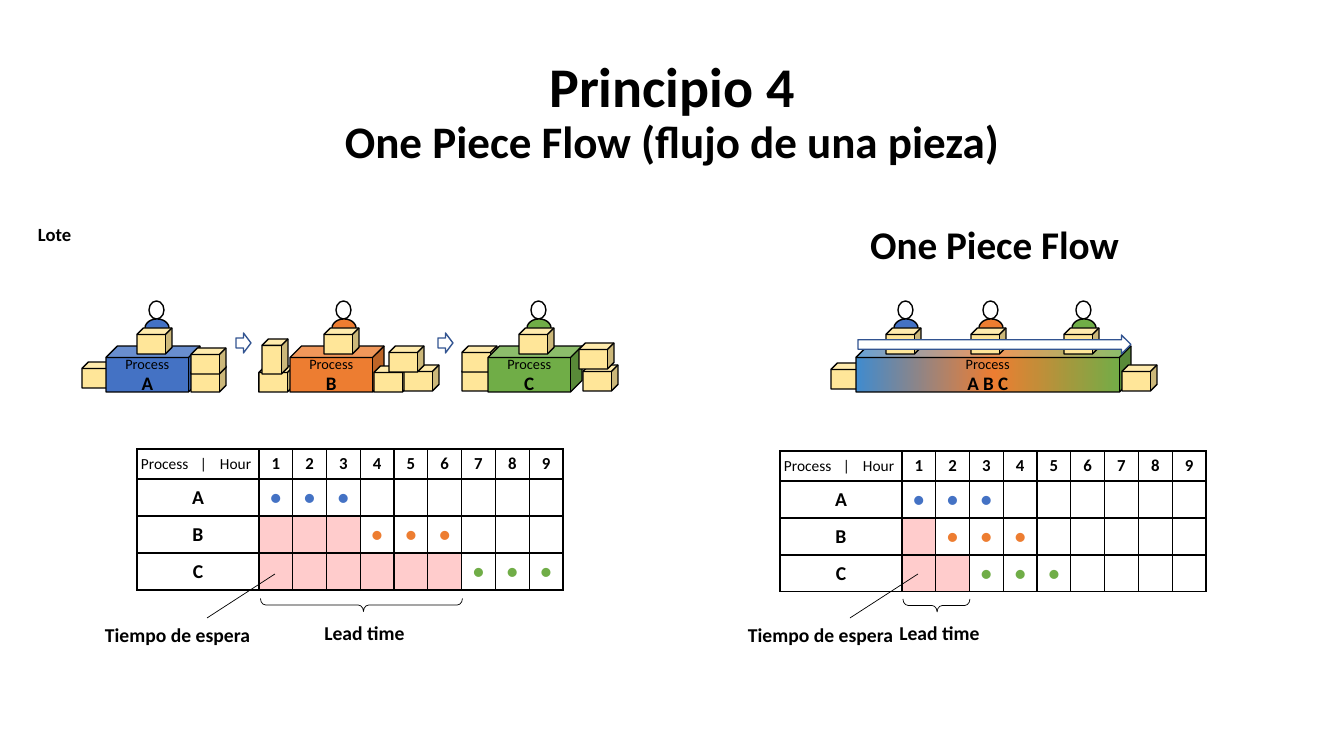
from copy import deepcopy

from lxml.etree import SubElement
from pptx import Presentation
from pptx.dml.color import RGBColor
from pptx.enum.shapes import MSO_CONNECTOR, MSO_SHAPE
from pptx.enum.text import MSO_ANCHOR, MSO_AUTO_SIZE, PP_ALIGN
from pptx.oxml import parse_xml
from pptx.oxml.ns import nsdecls, qn
from pptx.util import Pt

SCALE = 914400 / 100.8
BLACK = RGBColor(0x00, 0x00, 0x00)
WHITE = RGBColor(0xFF, 0xFF, 0xFF)
BLUE = RGBColor(0x44, 0x72, 0xC4)
ORANGE = RGBColor(0xED, 0x7D, 0x31)
GREEN = RGBColor(0x70, 0xAD, 0x47)
SKY = RGBColor(0x40, 0x8B, 0xCE)
CRATE = RGBColor(0xFF, 0xE6, 0x99)
WAITING = RGBColor(0xFF, 0xCC, 0xCC)
ARROW_EDGE = RGBColor(0x32, 0x54, 0x91)
PROCESSES = (("A", BLUE), ("B", ORANGE), ("C", GREEN))
HOURS = 9
PIECES = 3
LABEL_WIDTH = 122
HOURS_WIDTH = 304
HEADER_HEIGHT = 30
ROW_HEIGHT = 37
NOTE_TOP = 618
BRACE_MIDDLE = 605


def px(length):
    return round(length * SCALE)


def box_of(*lengths):
    return [px(length) for length in lengths]


def apply(target, values):
    for key, value in values.items():
        setattr(target, key, value)


def write(paragraph, text, size, bold=False, color=BLACK, **layout):
    apply(paragraph, layout)
    run = paragraph.add_run()
    run.text = text
    apply(run.font, {"name": "Calibri", "size": Pt(size), "bold": bold})
    run.font.color.rgb = color


def add_label(slide, box, text, size, **layout):
    frame = slide.shapes.add_textbox(*box_of(*box)).text_frame
    frame.word_wrap = True
    write(frame.paragraphs[0], text, size, True, **layout)


def add_part(shapes, preset, box, fill=None, edge=BLACK, width=1):
    part = shapes.add_shape(preset, *box_of(*box))
    part.shadow.inherit = False
    if fill is None:
        part.fill.background()
    else:
        part.fill.solid()
        part.fill.fore_color.rgb = fill
    part.line.color.rgb = edge
    part.line.width = Pt(width)
    return part


def blend(fill, stops):
    fill.gradient()
    fill.gradient_angle = 0
    stop_list = fill.gradient_stops[0]._gs.getparent()
    stop_list.append(deepcopy(stop_list[-1]))
    for stop, (position, color) in zip(fill.gradient_stops, stops):
        stop.position = position
        stop.color.rgb = color


def draw_title(slide, box):
    title = slide.shapes.title
    apply(title, dict(zip(("left", "top", "width", "height"), box_of(*box))))
    frame = title.text_frame
    apply(frame, {"auto_size": MSO_AUTO_SIZE.NONE, "word_wrap": True,
                  "vertical_anchor": MSO_ANCHOR.MIDDLE})
    layout = {"alignment": PP_ALIGN.CENTER, "line_spacing": 0.9}
    write(frame.paragraphs[0], "Principio 4", 40, True, **layout)
    write(frame.add_paragraph(), "One Piece Flow (flujo de una pieza)", 32.2, True, **layout)


def draw_station(shapes, origin, name, bench_color, bench, operators, behind, ahead):
    left, top = origin

    def crate(x, y, width=35, height=26):
        add_part(shapes, MSO_SHAPE.CUBE, (left + x, top + y, width, height), CRATE)

    for x, color in operators:
        add_part(shapes, MSO_SHAPE.OVAL, (left + x, top, 15, 18))
        add_part(shapes, MSO_SHAPE.OVAL, (left + x - 4, top + 18, 24, 18), color)
    for place in behind:
        crate(*place)
    bench_x, bench_width = bench
    table = add_part(shapes, MSO_SHAPE.CUBE, (left + bench_x, top + 45, bench_width, 46), bench_color)
    frame = table.text_frame
    apply(frame, {"word_wrap": True, "vertical_anchor": MSO_ANCHOR.MIDDLE, "margin_left": 0,
                  "margin_right": 0, "margin_top": 0, "margin_bottom": 0})
    write(frame.paragraphs[0], "Process", 10.2, alignment=PP_ALIGN.CENTER)
    write(frame.add_paragraph(), name, 13.6, True, alignment=PP_ALIGN.CENTER)
    for x, _ in operators:
        crate(x - 12, 27)
    for place in ahead:
        crate(*place)
    return table


def draw_batch_line(slide, origin):
    left, top = origin
    shapes = slide.shapes.add_group_shape().shapes
    stations = (
        (24, 67, [(0, 61)], [(109, 65), (109, 47)]),
        (208, 254, [(177, 65), (180, 38, 26, 35)], [(292, 65), (322, 64), (307, 45)]),
        (406, 449, [(380, 64), (380, 45)], [(501, 64), (497, 42)]),
    )
    for (name, color), (bench, operator, behind, ahead) in zip(PROCESSES, stations):
        draw_station(shapes, origin, name, color, (bench, 94), [(operator, color)], behind, ahead)
    for x in (154, 356):
        add_part(shapes, MSO_SHAPE.RIGHT_ARROW, (left + x, top + 32, 15, 20), WHITE, ARROW_EDGE)


def draw_flow_line(slide, origin):
    left, top = origin
    shapes = slide.shapes.add_group_shape().shapes
    operators = [(67, BLUE), (152, ORANGE), (245, GREEN)]
    bench = draw_station(shapes, origin, "A B C", BLUE, (25, 275), operators, [(0, 62)], [(291, 64)])
    blend(bench.fill, ((0, SKY), (0.5, ORANGE), (0.97, GREEN)))
    add_part(shapes, MSO_SHAPE.RIGHT_ARROW, (left + 27, top + 34, 273, 19), WHITE, ARROW_EDGE)


def format_cell(cell, fill=None):
    margin = px(4)
    apply(cell, {"margin_left": margin, "margin_right": margin, "margin_top": margin,
                 "margin_bottom": margin, "vertical_anchor": MSO_ANCHOR.MIDDLE})
    if fill is None:
        cell.fill.background()
    else:
        cell.fill.solid()
        cell.fill.fore_color.rgb = fill
    for index, side in enumerate(("lnL", "lnR", "lnT", "lnB")):
        cell._tc.tcPr.insert(index, parse_xml(
            f'<a:{side} {nsdecls("a")} w="12700"><a:solidFill><a:srgbClr val="{BLACK}"/>'
            f'</a:solidFill></a:{side}>'))


def draw_schedule(slide, origin, starts):
    size = (LABEL_WIDTH + HOURS_WIDTH, HEADER_HEIGHT + ROW_HEIGHT * len(PROCESSES))
    table = slide.shapes.add_table(len(PROCESSES) + 1, HOURS + 1, *box_of(*origin, *size)).table
    apply(table, {"first_row": False, "horz_banding": False})
    for index, column in enumerate(table.columns):
        column.width = px(HOURS_WIDTH) // HOURS if index else px(LABEL_WIDTH)
    for index, row in enumerate(table.rows):
        row.height = px(ROW_HEIGHT if index else HEADER_HEIGHT)
    centre = {"alignment": PP_ALIGN.CENTER}
    heading = table.cell(0, 0)
    format_cell(heading)
    paragraph = heading.text_frame.paragraphs[0]
    tabs = SubElement(paragraph._p.get_or_add_pPr(), qn("a:tabLst"))
    for position in (59, 79):
        SubElement(tabs, qn("a:tab"), pos=str(px(position)), algn="l")
    write(paragraph, "Process\t|\tHour", 11)
    for hour in range(1, HOURS + 1):
        cell = table.cell(0, hour)
        format_cell(cell)
        write(cell.text_frame.paragraphs[0], str(hour), 12, True, **centre)
    for row, ((name, color), start) in enumerate(zip(PROCESSES, starts), 1):
        label = table.cell(row, 0)
        format_cell(label)
        write(label.text_frame.paragraphs[0], name, 14, True, **centre)
        for hour in range(1, HOURS + 1):
            cell = table.cell(row, hour)
            format_cell(cell, WAITING if hour < start else None)
            paragraph = cell.text_frame.paragraphs[0]
            if start <= hour < start + PIECES:
                write(paragraph, "●", 14, color=color, **centre)
            else:
                paragraph._p.get_or_add_endParaRPr().set("sz", "1400")


def draw_notes(slide, left, waiting_hours):
    add_label(slide, (left - 42, NOTE_TOP, 223, 34), "Tiempo de espera", 14)
    pointer = slide.shapes.add_connector(
        MSO_CONNECTOR.STRAIGHT, *box_of(left + 70, NOTE_TOP, left + 138, NOTE_TOP - 44))
    pointer.line.color.rgb = BLACK
    pointer.line.width = Pt(0.5)
    SubElement(pointer._element.spPr, qn("a:effectLst"))
    span = HOURS_WIDTH * waiting_hours // HOURS
    middle = left + LABEL_WIDTH + 1 + span // 2
    brace = add_part(slide.shapes, MSO_SHAPE.LEFT_BRACE,
                     (middle - 6, BRACE_MIDDLE - span // 2, 13, span), width=0.5)
    brace.rotation = 270
    for index, ratio in enumerate((0.4, 0.51)):
        brace.adjustments[index] = ratio
    add_label(slide, (middle - 108, NOTE_TOP - 2, 223, 34), "Lead time", 14, alignment=PP_ALIGN.CENTER)


def main():
    deck = Presentation()
    apply(deck, {"slide_width": px(1344), "slide_height": px(756)})
    slide = deck.slides.add_slide(deck.slide_layouts[5])
    draw_title(slide, (0, 48, 1344, 132))
    add_label(slide, (28, 221, 643, 55), "Lote", 13.3, line_spacing=0.9)
    add_label(slide, (672, 221, 645, 55), "One Piece Flow", 28,
              alignment=PP_ALIGN.CENTER, line_spacing=0.9)
    draw_batch_line(slide, (82, 301))
    draw_flow_line(slide, (831, 301))
    for origin, starts in (((137, 449), (1, 4, 7)), ((780, 451), (1, 2, 3))):
        draw_schedule(slide, origin, starts)
        draw_notes(slide, origin[0], starts[-1] - 1)
    deck.save("out.pptx")


if __name__ == "__main__":
    main()
